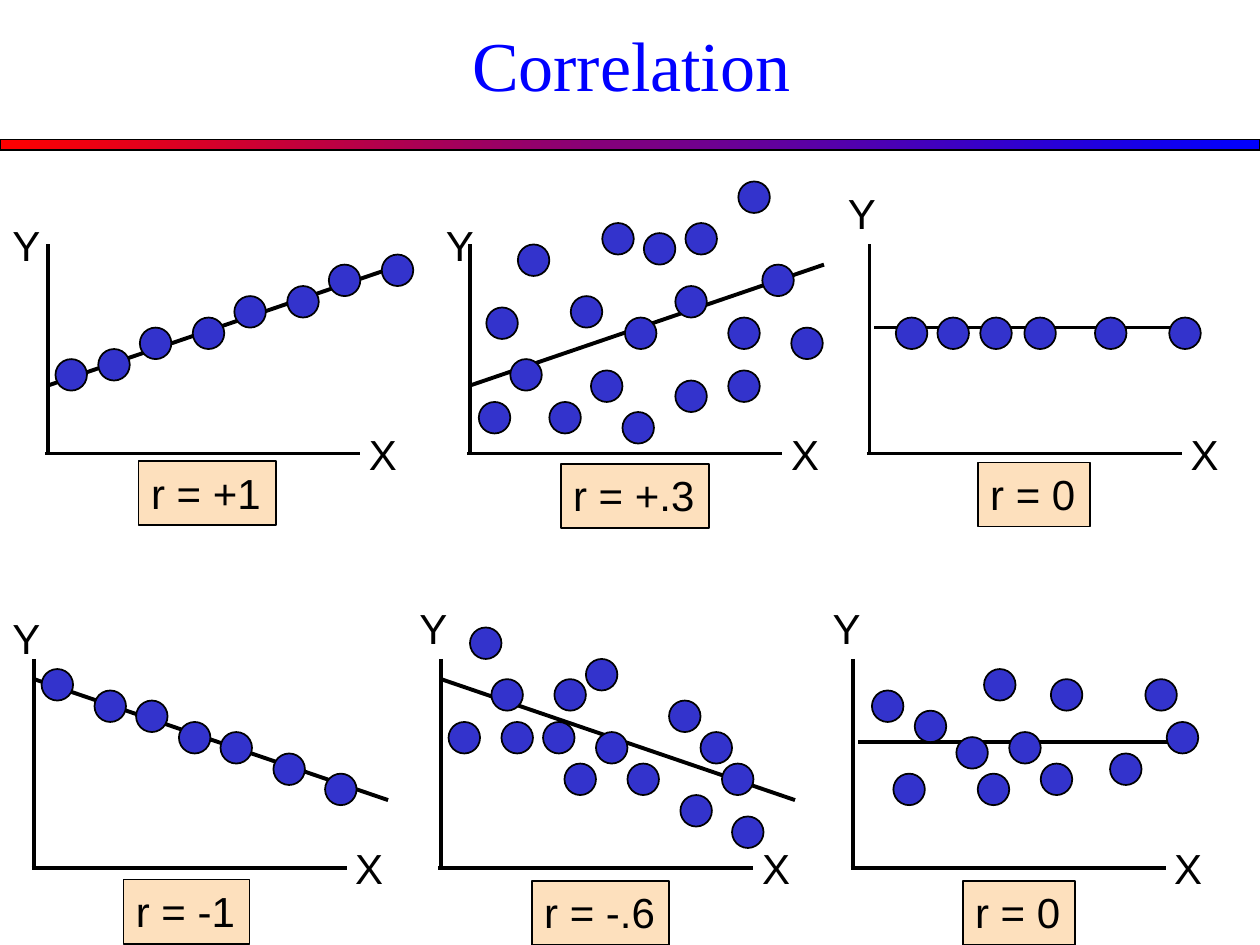
from dataclasses import dataclass

from lxml.etree import SubElement
from pptx import Presentation
from pptx.dml.color import RGBColor
from pptx.enum.shapes import MSO_CONNECTOR, MSO_SHAPE
from pptx.enum.text import MSO_ANCHOR, MSO_AUTO_SIZE, PP_ALIGN
from pptx.oxml.ns import qn
from pptx.util import Inches, Pt

COLORS = {
    "black": "000000",
    "title": "0000FF",
    "bar_start": "FF0000",
    "bar_end": "0000FF",
    "dot": "3333CC",
    "label": "FDE0BD",
}
LABEL_FONT = {"name": "Arial", "size": Pt(24)}
TITLE_FONT = {"name": "Times New Roman", "size": Pt(40)}
DOT_SIZE = 0.25
AXIS_HEIGHT = 1.66
AXIS_WIDTH = 2.5
TREND_WIDTH = 2.81


@dataclass
class Plot:
    """One scatter plot; trend holds the start and end heights of its line."""
    axis_x: float
    y_label: tuple
    trend: tuple
    result: str
    result_box: tuple
    dots: list


TOP_ROW = [
    Plot(0.38, (0, 1.69), (3.06, 2.1), "r = +1", (1.1, 3.66, 1.09),
         [(0.44, 2.85), (0.78, 2.77), (1.11, 2.6), (1.53, 2.52),
          (1.86, 2.35), (2.28, 2.27), (2.61, 2.1), (3.03, 2.02)]),
    Plot(3.73, (3.44, 1.69), (3.06, 2.1), "r = +.3", (4.45, 3.68, 1.18),
         [(3.8, 3.19), (3.86, 2.44), (4.05, 2.85), (4.11, 1.94),
          (4.36, 3.19), (4.53, 2.35), (4.69, 2.94), (4.78, 1.77),
          (4.94, 3.27), (4.96, 2.52), (5.11, 1.85), (5.36, 2.27),
          (5.36, 3.02), (5.44, 1.77), (5.78, 2.52), (5.78, 2.94),
          (5.86, 1.44), (6.05, 2.1), (6.28, 2.6)]),
    Plot(6.9, (6.63, 1.44), (2.6, 2.6), "r = 0", (7.76, 3.67, 0.89),
         [(x, 2.52) for x in (7.11, 7.44, 7.78, 8.13, 8.69, 9.28)]),
]
BOTTOM_ROW = [
    Plot(0.27, (0, 4.81), (5.39, 6.35), "r = -1", (0.98, 6.98, 1),
         [(0.33, 5.31), (0.75, 5.48), (1.08, 5.56), (1.42, 5.73),
          (1.75, 5.81), (2.17, 5.98), (2.58, 6.14)]),
    Plot(3.5, (3.23, 4.73), (5.39, 6.35), "r = -.6", (4.22, 6.99, 1.09),
         [(3.56, 5.73), (3.73, 4.98), (3.9, 5.39), (3.98, 5.73),
          (4.31, 5.73), (4.4, 5.39), (4.48, 6.06), (4.65, 5.23),
          (4.73, 5.81), (4.98, 6.06), (5.31, 5.56), (5.4, 6.31),
          (5.56, 5.81), (5.73, 6.06), (5.81, 6.48)]),
    Plot(6.77, (6.51, 4.73), (5.89, 5.89), "r = 0", (7.64, 6.99, 0.89),
         [(6.92, 5.48), (7.09, 6.14), (7.26, 5.64), (7.59, 5.85),
          (7.76, 6.14), (7.81, 5.31), (8.01, 5.81), (8.26, 6.06),
          (8.34, 5.39), (8.81, 5.98), (9.09, 5.39), (9.26, 5.73)]),
]


def color(name):
    return RGBColor.from_string(COLORS[name])


def add_line(shapes, start, end, width):
    line = shapes.add_connector(
        MSO_CONNECTOR.STRAIGHT, *map(Inches, (*start, *end)))
    line.line.color.rgb = color("black")
    line.line.width = Pt(width)
    SubElement(line._element.spPr, qn("a:effectLst"))


def add_outlined_shape(shapes, kind, box, fill=None, line_width=1):
    shape = shapes.add_shape(kind, *map(Inches, box))
    shape.shadow.inherit = False
    shape.line.color.rgb = color("black")
    shape.line.width = Pt(line_width)
    if fill:
        shape.fill.solid()
        shape.fill.fore_color.rgb = color(fill)
    return shape


def write_text(shape, text, font_format, font_color="black",
               alignment=PP_ALIGN.LEFT):
    paragraph = shape.text_frame.paragraphs[0]
    paragraph.text = text
    paragraph.alignment = alignment
    for attribute, value in font_format.items():
        setattr(paragraph.font, attribute, value)
    paragraph.font.color.rgb = color(font_color)


def write_label(shape, text):
    """Write one unwrapped line in a shape that fits its text."""
    frame = shape.text_frame
    frame.word_wrap = False
    frame.auto_size = MSO_AUTO_SIZE.SHAPE_TO_FIT_TEXT
    frame.vertical_anchor = MSO_ANCHOR.TOP
    write_text(shape, text, LABEL_FONT)


def add_axis_label(shapes, text, position):
    write_label(shapes.add_textbox(*map(Inches, (*position, 0.42, 0.5))), text)


def add_plot(shapes, plot, axis_top):
    x, base = plot.axis_x, axis_top + AXIS_HEIGHT
    start_y, end_y = plot.trend
    trend_x, trend_width = (x, TREND_WIDTH)
    if start_y == end_y:
        trend_x, trend_width = (x + 0.04, AXIS_WIDTH)

    add_line(shapes, (x, axis_top), (x, base), 2)
    add_line(shapes, (x - 0.02, base), (x - 0.02 + AXIS_WIDTH, base), 2)
    add_line(shapes, (trend_x, start_y), (trend_x + trend_width, end_y),
             2 if start_y == end_y else 2.25)
    for dot in plot.dots:
        add_outlined_shape(shapes, MSO_SHAPE.OVAL,
                           (*dot, DOT_SIZE, DOT_SIZE), "dot")
    add_axis_label(shapes, "Y", plot.y_label)
    add_axis_label(shapes, "X", (x + 2.45, base - 0.25))
    result = add_outlined_shape(shapes, MSO_SHAPE.RECTANGLE,
                                (*plot.result_box, 0.51), "label")
    write_label(result, plot.result)


def add_gradient_bar(shapes):
    bar = add_outlined_shape(shapes, MSO_SHAPE.RECTANGLE,
                             (0, 1.11, 10, 0.08), line_width=0.75)
    bar.fill.gradient()
    bar.fill.gradient_angle = 0
    for stop, name in zip(bar.fill.gradient_stops, ("bar_start", "bar_end")):
        stop.color.rgb = color(name)


def add_title(shapes, text):
    title = shapes.add_textbox(*map(Inches, (1.24, 0, 7.54, 1.01)))
    title.text_frame.word_wrap = True
    title.text_frame.vertical_anchor = MSO_ANCHOR.MIDDLE
    write_text(title, text, TITLE_FONT, "title", PP_ALIGN.CENTER)


def main():
    presentation = Presentation()
    presentation.slide_width = Inches(10)
    presentation.slide_height = Inches(7.5)
    slide = presentation.slides.add_slide(presentation.slide_layouts[6])

    add_gradient_bar(slide.shapes)
    for row, axis_top in ((BOTTOM_ROW, 5.23), (TOP_ROW, 1.94)):
        group = slide.shapes.add_group_shape()
        for plot in row:
            add_plot(group.shapes, plot, axis_top)
    add_title(slide.shapes, "Correlation")
    presentation.save("out.pptx")


if __name__ == "__main__":
    main()
